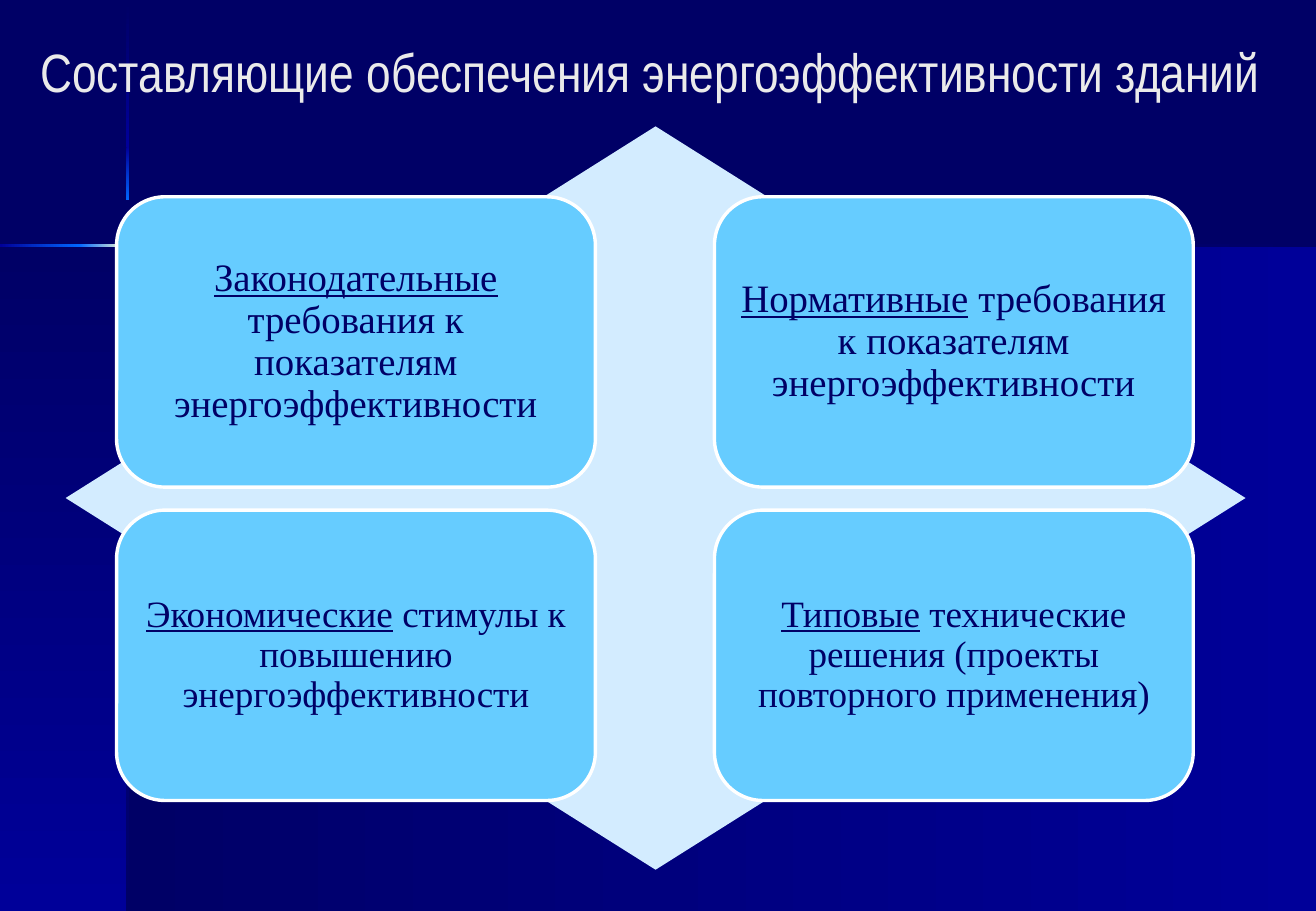
from pptx import Presentation
from pptx import util as u
from pptx.dml.color import RGBColor
from pptx.enum import shapes, text

TITLE = "Составляющие обеспечения энергоэффективности зданий"
CARDS = [
    ("Законодательные", " требования к показателям энергоэффективности", 23, 0.1),
    ("Нормативные", " требования к показателям энергоэффективности", 23, 0.1),
    ("Экономические", " стимулы к повышению энергоэффективности", 22, 0.09),
    ("Типовые", " технические решения (проекты повторного применения)", 22, 0.09),
]
COLORS = {
    "navy": "000066", "blue": "000099", "bright": "0066FF", "cream": "FFFFCC",
    "title": "EAEAEA", "diamond": "D3ECFF", "card": "66CCFF", "white": "FFFFFF",
}
RIGHTWARD, DOWNWARD = 0, 270
BACKDROP = [
    ((1.05, 2.02, 9.78, 5.48), "navy", "blue", RIGHTWARD),
    ((0, 2.02, 1.05, 5.48), "navy", "blue", DOWNWARD),
    ((1.04, 0.01, 0.02, 1.2), "navy", "blue", DOWNWARD),
    ((1.04, 2.82, 0.02, 4.68), "blue", "navy", DOWNWARD),
    ((1.92, 2.01, 8.91, 0.02), "blue", "navy", RIGHTWARD),
    ((1.04, 1.21, 0.02, 0.44), "blue", "bright", DOWNWARD),
    ((0, 2.01, 0.65, 0.02), "blue", "bright", RIGHTWARD),
    ((0.65, 2.01, 0.4, 0.02), "bright", "cream", RIGHTWARD),
    ((1.05, 2.01, 0.39, 0.02), "cream", "bright", RIGHTWARD),
]
TITLE_BOX = (0.23, 0.33, 10.6, 0.5)
DIAMOND_BOX = (0.54, 1.04, 9.71, 6.12)
CARD_LEFT, CARD_TOP, CARD_WIDTH, CARD_HEIGHT = 0.96, 1.62, 3.94, 2.39
COLUMN_STEP, ROW_STEP = 4.92, 2.58


def color(name):
    return RGBColor.from_string(COLORS[name])


def add_shape(slide, kind, box, fill=None):
    shape = slide.shapes.add_shape(kind, *map(u.Inches, box))
    shape.shadow.inherit = False
    shape.line.fill.background()
    if fill:
        shape.fill.solid()
        shape.fill.fore_color.rgb = color(fill)
    return shape


def add_gradient(slide, box, start, end, angle):
    shape = add_shape(slide, shapes.MSO_SHAPE.RECTANGLE, box)
    shape.fill.gradient()
    shape.fill.gradient_angle = angle
    for stop, name, position in zip(shape.fill.gradient_stops, (start, end), (0, 1)):
        stop.color.rgb = color(name)
        stop.position = position


def set_font(run, name, size, fill):
    run.font.name = name
    run.font.size = u.Pt(size)
    run.font.color.rgb = color(fill)


def format_title(title):
    title.left, title.top, title.width, title.height = map(u.Inches, TITLE_BOX)
    frame = title.text_frame
    frame.text = TITLE
    frame.word_wrap = True
    frame.auto_size = text.MSO_AUTO_SIZE.NONE
    frame.vertical_anchor = text.MSO_ANCHOR.MIDDLE
    frame.paragraphs[0].alignment = text.PP_ALIGN.LEFT
    set_font(frame.paragraphs[0].runs[0], "Arial Narrow", 32, "title")
    title.element.getparent().append(title.element)


def add_card(slide, index, keyword, rest, size, inset):
    row, column = divmod(index, 2)
    box = (CARD_LEFT + column * COLUMN_STEP, CARD_TOP + row * ROW_STEP,
           CARD_WIDTH, CARD_HEIGHT)
    card = add_shape(slide, shapes.MSO_SHAPE.ROUNDED_RECTANGLE, box, "card")
    card.line.color.rgb = color("white")
    card.line.width = u.Pt(2)
    frame = card.text_frame
    frame.word_wrap = True
    frame.vertical_anchor = text.MSO_ANCHOR.MIDDLE
    frame.margin_left = frame.margin_right = u.Inches(inset)
    frame.margin_top = frame.margin_bottom = u.Inches(inset)
    paragraph = frame.paragraphs[0]
    paragraph.alignment = text.PP_ALIGN.CENTER
    paragraph.line_spacing = 0.9
    for words, underlined in ((keyword, True), (rest, False)):
        run = paragraph.add_run()
        run.text = words
        set_font(run, "Times New Roman", size, "navy")
        run.font.underline = underlined


def main():
    presentation = Presentation()
    presentation.slide_width = u.Inches(10.83)
    presentation.slide_height = u.Inches(7.5)
    slide = presentation.slides.add_slide(presentation.slide_layouts[5])
    slide.background.fill.solid()
    slide.background.fill.fore_color.rgb = color("navy")
    for band in BACKDROP:
        add_gradient(slide, *band)
    format_title(slide.shapes.title)
    add_shape(slide, shapes.MSO_SHAPE.DIAMOND, DIAMOND_BOX, "diamond")
    for index, card in enumerate(CARDS):
        add_card(slide, index, *card)
    presentation.save("out.pptx")


if __name__ == "__main__":
    main()
